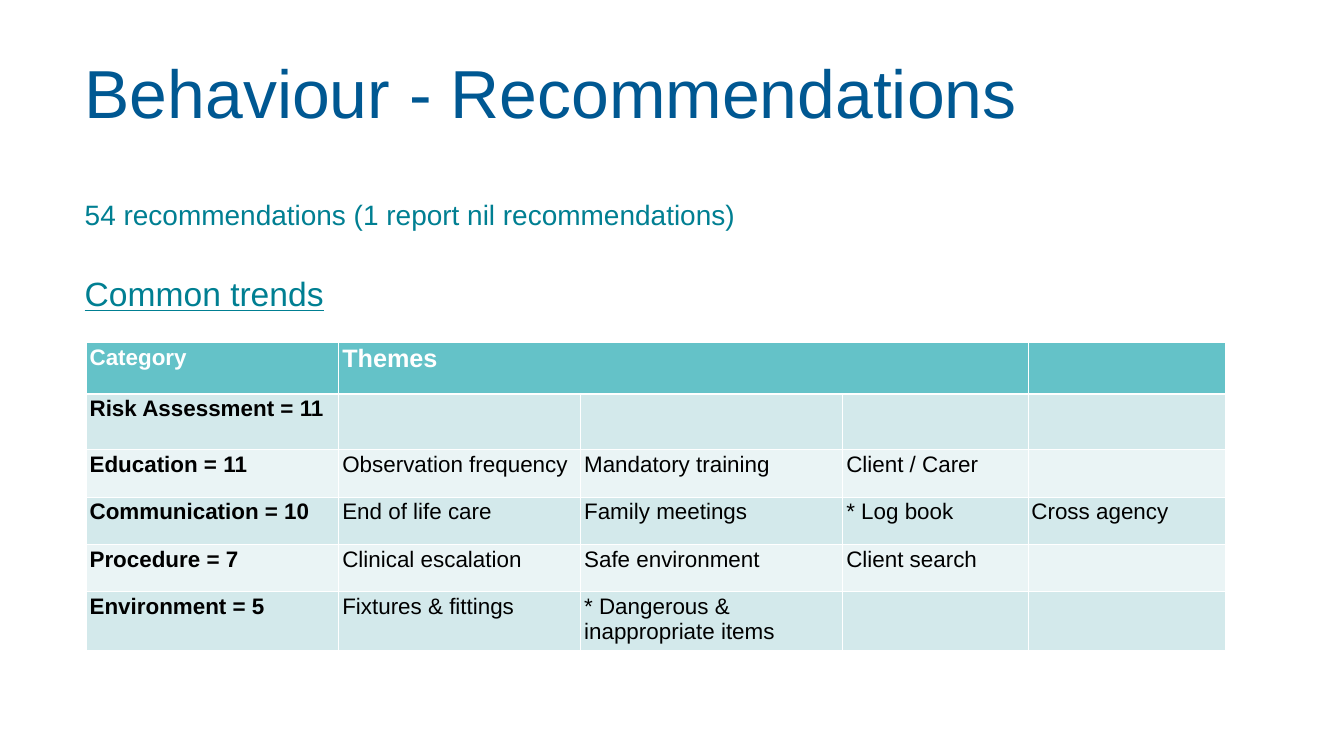
from dataclasses import dataclass

from lxml import etree
from pptx import Presentation
from pptx.dml.color import RGBColor
from pptx.enum.text import MSO_ANCHOR
from pptx.oxml.ns import qn
from pptx.util import Pt

TOP, MIDDLE = MSO_ANCHOR.TOP, MSO_ANCHOR.MIDDLE


@dataclass(frozen=True)
class Theme:
    font: str = "Arial"
    navy: str = "005892"
    teal: str = "007F92"
    head: str = "64C2C8"
    bands: tuple = ("D3E9EB", "EAF4F5")
    white: str = "FFFFFF"
    black: str = "000000"
    title: int = 97
    trend: int = 48
    intro: int = 40
    theme: int = 36
    cell: int = 32


THEME = Theme()

COLS = (361, 345.5, 374.5, 264.5, 281.5)
HEIGHTS = (73.5, 80, 67.5, 67.5, 67.5, 80)
ROWS = (
    ("Risk Assessment = 11",),
    ("Education = 11", "Observation frequency", "Mandatory training", "Client / Carer"),
    ("Communication = 10", "End of life care", "Family meetings", "* Log book",
     "Cross agency"),
    ("Procedure = 7", "Clinical escalation", "Safe environment", "Client search"),
    ("Environment = 5", "Fixtures & fittings", "* Dangerous & inappropriate items"),
)


def write(para, text, size, color, bold=False, under=False, line=None, before=None):
    """Put formatted text in a paragraph."""
    if line:
        para.line_spacing = Pt(line)
    if before:
        para.space_before = Pt(before)
    run = para.add_run()
    run.text = text
    font = run.font
    font.name, font.size = THEME.font, Pt(size)
    font.bold, font.underline = bold, under
    font.color.rgb = RGBColor.from_string(color)


def frame(slide, box, anchor=TOP):
    """Add a text box without margins."""
    text = slide.shapes.add_textbox(*map(Pt, box)).text_frame
    text.word_wrap = True
    text.vertical_anchor = anchor
    text.margin_left = text.margin_right = 0
    text.margin_top = text.margin_bottom = 0
    return text


def edge(cell, low):
    """Draw white cell borders, with the lower one of the given width."""
    props = cell._tc.get_or_add_tcPr()
    widths = (("lnL", 1), ("lnR", 1), ("lnT", 1), ("lnB", low))
    for spot, (tag, width) in enumerate(widths):
        line = etree.Element(qn(f"a:{tag}"), w=str(Pt(width)))
        fill = etree.SubElement(line, qn("a:solidFill"))
        etree.SubElement(fill, qn("a:srgbClr"), val=THEME.white)
        props.insert(spot, line)


def style(cell, color, low=1):
    cell.fill.solid()
    cell.fill.fore_color.rgb = RGBColor.from_string(color)
    cell.margin_left = cell.margin_right = Pt(5)
    edge(cell, low)


def title(slide, box):
    text = frame(slide, box, MIDDLE)
    write(text.paragraphs[0], "Behaviour - Recommendations", THEME.title,
          THEME.navy, line=108)


def intro(slide, box):
    text = frame(slide, box)
    write(text.paragraphs[0], "54 recommendations (1 report nil recommendations)",
          THEME.intro, THEME.teal, line=48)
    write(text.add_paragraph(), "Common trends", THEME.trend, THEME.teal,
          under=True, line=48, before=70.5)


def trends(slide, box):
    grid = slide.shapes.add_table(len(HEIGHTS), len(COLS), *map(Pt, box)).table
    for col, width in zip(grid.columns, COLS):
        col.width = Pt(width)
    for row, height in zip(grid.rows, HEIGHTS):
        row.height = Pt(height)

    # Header row
    for c in range(len(COLS)):
        style(grid.cell(0, c), THEME.head, low=3)
    grid.cell(0, 1).merge(grid.cell(0, 3))
    heads = (("Category", THEME.cell), ("Themes", THEME.theme))
    for c, (name, size) in enumerate(heads):
        write(grid.cell(0, c).text_frame.paragraphs[0], name, size,
              THEME.white, bold=True)

    # Banded body rows
    for r, words in enumerate(ROWS, 1):
        for c in range(len(COLS)):
            cell = grid.cell(r, c)
            style(cell, THEME.bands[(r - 1) % 2])
            if c < len(words):
                write(cell.text_frame.paragraphs[0], words[c], THEME.cell,
                      THEME.black, bold=c == 0)


def main():
    deck = Presentation()
    deck.slide_width, deck.slide_height = Pt(1920), Pt(1080)
    slide = deck.slides.add_slide(deck.slide_layouts[6])
    title(slide, (121, 88.5, 1667, 91.5))
    intro(slide, (121, 281.5, 1821.5 - 121, 299))
    trends(slide, (123, 489, sum(COLS), sum(HEIGHTS)))
    deck.save("out.pptx")


if __name__ == "__main__":
    main()
